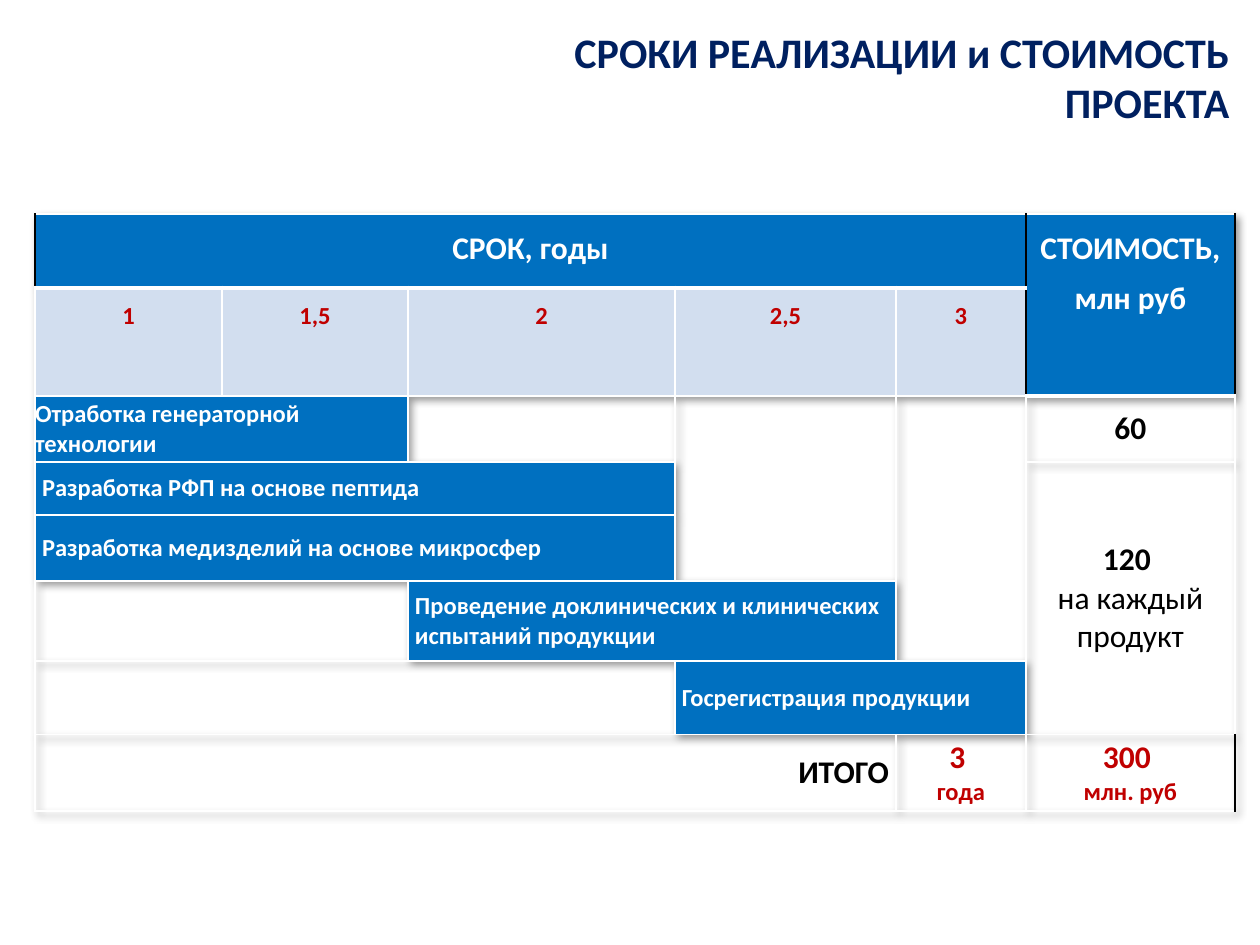
from lxml import etree
from pptx import Presentation
from pptx.dml.color import RGBColor
from pptx.enum.text import MSO_ANCHOR, PP_ALIGN
from pptx.oxml.ns import qn
from pptx.util import Emu, Pt

LEFT, CENTER, RIGHT = PP_ALIGN.LEFT, PP_ALIGN.CENTER, PP_ALIGN.RIGHT
TOP, MIDDLE = MSO_ANCHOR.TOP, MSO_ANCHOR.MIDDLE
EMU_PER_INCH, PX_PER_INCH = 914400, 126
COLORS = {"navy": "002060", "blue": "0070C0", "pale": "D2DEEF",
          "red": "C00000", "white": "FFFFFF", "black": "000000"}


def px(length):
    return Emu(round(length * EMU_PER_INCH / PX_PER_INCH))


def color(name):
    return RGBColor.from_string(COLORS[name])


class SlideBuilder:
    font = "Calibri"
    inset = (7, 4)

    def __init__(self, prs):
        self.slide = prs.slides.add_slide(prs.slide_layouts[5])

    def style(self, paragraph, size, ink, bold=True, align=LEFT):
        paragraph.alignment = align
        paragraph.font.name = self.font
        paragraph.font.size = Pt(size)
        paragraph.font.bold = bold
        paragraph.font.color.rgb = color(ink)

    def title(self, text, left, top, width, height):
        heading = self.slide.shapes.title
        heading.left, heading.top = px(left), px(top)
        heading.width, heading.height = px(width), px(height)
        frame = heading.text_frame
        frame.text = text
        frame.word_wrap = True
        frame.vertical_anchor = TOP
        self.style(frame.paragraphs[0], 24, "navy", align=RIGHT)
        frame.paragraphs[0].space_after = Pt(12)

    def table(self, left, top, widths, heights):
        frame = self.slide.shapes.add_table(
            len(heights), len(widths), px(left), px(top),
            px(sum(widths)), px(sum(heights)))
        self.grid = frame.table
        for column, width in zip(self.grid.columns, widths):
            column.width = px(width)
        for row, height in zip(self.grid.rows, heights):
            row.height = px(height)
            for cell in row.cells:
                self.borders(cell)
                cell.fill.background()
        self.table_shadow(frame)

    def table_shadow(self, frame):
        properties = frame._element.find(".//" + qn("a:tblPr"))
        effects = etree.Element(qn("a:effectLst"))
        shadow = etree.SubElement(
            effects, qn("a:outerShdw"), blurRad="50800", dist="38100",
            dir="2700000", algn="tl", rotWithShape="0")
        ink = etree.SubElement(shadow, qn("a:prstClr"), val="black")
        etree.SubElement(ink, qn("a:alpha"), val="40000")
        properties.insert(0, effects)

    def borders(self, cell, **special):
        """Draw white 1 pt edges, or those given as side=(colour, points)."""
        properties = cell._tc.get_or_add_tcPr()
        for index, side in enumerate("LRTB"):
            ink, points = special.get(side, ("white", 1))
            tag = qn("a:ln" + side)
            for old in properties.findall(tag):
                properties.remove(old)
            line = etree.Element(tag, w=str(Pt(points)))
            fill = etree.SubElement(line, qn("a:solidFill"))
            etree.SubElement(fill, qn("a:srgbClr"), val=COLORS[ink])
            properties.insert(index, line)

    def cell(self, row, col, lines=(), span=(1, 1), fill=None, align=CENTER,
             anchor=MIDDLE, inset=inset, spacing=None, after=None, edges=None):
        """Fill one cell; each line is (text, size, colour, bold)."""
        rows, cols = span
        cell = self.grid.cell(row, col)
        if span != (1, 1):
            cell.merge(self.grid.cell(row + rows - 1, col + cols - 1))
        for r in range(row, row + rows):
            for c in range(col, col + cols):
                part = self.grid.cell(r, c)
                if edges:
                    self.borders(part, **edges)
                if fill:
                    part.fill.solid()
                    part.fill.fore_color.rgb = color(fill)
        cell.vertical_anchor = anchor
        cell.margin_left = cell.margin_right = px(inset[0])
        cell.margin_top = cell.margin_bottom = px(inset[1])
        frame = cell.text_frame
        for index, (text, size, ink, bold) in enumerate(lines):
            paragraph = frame.paragraphs[0] if index == 0 else frame.add_paragraph()
            paragraph.text = text
            self.style(paragraph, size, ink, bold, align)
            if spacing:
                paragraph.line_spacing = spacing
            if after:
                paragraph.space_after = Pt(after)


def main():
    prs = Presentation()
    prs.slide_width, prs.slide_height = px(1260), px(945)
    page = SlideBuilder(prs)
    page.title("СРОКИ РЕАЛИЗАЦИИ и СТОИМОСТЬ ПРОЕКТА", 561, 20, 681, 115)
    page.table(35, 214, [187, 186, 267, 221, 130, 209],
               [74, 105, 66, 53, 66, 80, 74, 74])

    # Header and year scale
    header_edges = {"L": ("black", 1), "R": ("black", 1), "B": ("white", 3)}
    for col, text, span in ((0, "СРОК, годы", (1, 5)),
                            (5, "СТОИМОСТЬ, млн руб", (2, 1))):
        page.cell(0, col, [(text, 18, "white", True)], span, "blue",
                  anchor=TOP, spacing=1.3, edges=header_edges)
    for col, year in enumerate(("1", "1,5", "2", "2,5", "3")):
        page.cell(1, col, [(year, 14, "red", True)], fill="pale", anchor=TOP,
                  spacing=1.3, after=10, edges={"T": ("white", 3)})

    # Project stages: row, first column, number of columns
    stages = (
        (2, 0, 2, "Отработка генераторной технологии", (0, 0)),
        (3, 0, 3, "Разработка РФП на основе пептида", page.inset),
        (4, 0, 3, "Разработка медизделий на основе микросфер", page.inset),
        (5, 2, 2, "Проведение доклинических и клинических испытаний продукции",
         page.inset),
        (6, 3, 2, "Госрегистрация продукции", page.inset),
    )
    for row, col, cols, text, inset in stages:
        page.cell(row, col, [(text, 14, "white", True)], (1, cols), "blue",
                  align=LEFT, inset=inset)

    # Free areas around the stages
    for row, col, span in ((2, 3, (3, 1)), (2, 4, (4, 1)),
                           (5, 0, (1, 2)), (6, 0, (1, 3))):
        page.cell(row, col, span=span)

    # Costs
    page.cell(2, 5, [("60", 18, "black", True)], edges={"T": ("white", 3)})
    page.cell(3, 5, [("120 ", 18, "black", True),
                     ("на каждый продукт", 18, "black", False)], (4, 1))

    # Totals
    page.cell(7, 0, [("ИТОГО", 18, "black", True)], (1, 4), align=RIGHT)
    for col, amount, unit, edges in ((4, "3 ", "года", None),
                                     (5, "300 ", "млн. руб", {"R": ("black", 1)})):
        page.cell(7, col, [(amount, 18, "red", True), (unit, 14, "red", True)],
                  edges=edges)

    prs.save("out.pptx")


if __name__ == "__main__":
    main()
